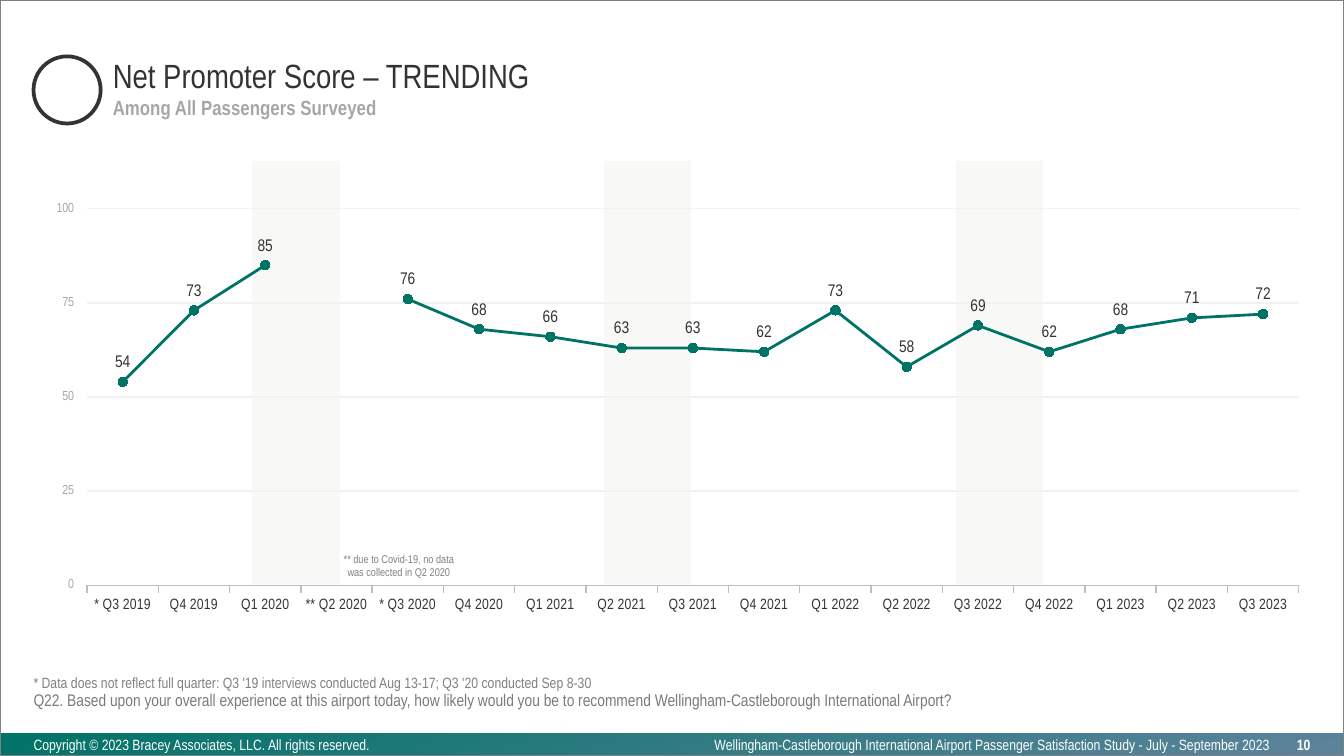
from pptx import Presentation
from pptx.chart.data import CategoryChartData
from pptx.dml.color import RGBColor
from pptx.enum.chart import (XL_CHART_TYPE, XL_LABEL_POSITION, XL_MARKER_STYLE,
                             XL_TICK_MARK)
from pptx.enum.shapes import MSO_SHAPE
from pptx.enum.text import MSO_ANCHOR, PP_ALIGN
from pptx.oxml import parse_xml
from pptx.oxml.ns import nsdecls, qn
from pptx.util import Inches, Pt

RECT, OVAL = MSO_SHAPE.RECTANGLE, MSO_SHAPE.OVAL
TOP, BOTTOM = MSO_ANCHOR.TOP, MSO_ANCHOR.BOTTOM
LEFT, MID, RIGHT = PP_ALIGN.LEFT, PP_ALIGN.CENTER, PP_ALIGN.RIGHT
LINES = XL_CHART_TYPE.LINE_MARKERS
ABOVE, ROUND = XL_LABEL_POSITION.ABOVE, XL_MARKER_STYLE.CIRCLE
OUT, NONE = XL_TICK_MARK.OUTSIDE, XL_TICK_MARK.NONE

FONT = "Arial Narrow"
COLORS = {"teal": "007367", "steel": "5D839B", "ink": "333333",
          "white": "FFFFFF", "gray": "808080", "ask": "7A7A7A",
          "pale": "A6A6A6", "axis": "BFBFBF", "grid": "F2F2F2",
          "band": "F8F8F6"}
CELL = 0.25  # grid columns and rows, in inches
WIDE, HIGH = 40.04, 22.52  # slide size in cells

# Boxes in cells: left, top, width, height
PAGE = (0, 0, WIDE, HIGH)
HEAD = (1, 1.64, 38, 2.04)
TREND = (1, 4.8, 37.96, 14.8)
NOTES = (1, 19.92, 38, 1.24)
FOOT = (0, 21.84, WIDE, 0.68)

AIRPORT = "Wellingham-Castleborough International Airport"
SCORES = [54, 73, 85, None, 76, 68, 66, 63, 63, 62, 73, 58, 69, 62, 68, 71, 72]
MARKS = {0: "* ", 3: "** ", 4: "* "}  # footnote signs by quarter


def rgb(name):
    return RGBColor.from_string(COLORS[name])


def place(box, x, y, w, h):
    """Turn cells inside a box into slide lengths."""
    return [Inches(v * CELL) for v in (box[0] + x, box[1] + y, w, h)]


def shape(slide, kind, spot, fill=None, line=None, width=1):
    item = slide.shapes.add_shape(kind, *spot)
    item.shadow.inherit = False
    if fill:
        item.fill.solid()
        item.fill.fore_color.rgb = rgb(fill)
    else:
        item.fill.background()
    if line:
        item.line.color.rgb = rgb(line)
        item.line.width = Pt(width)
    else:
        item.line.fill.background()
    return item


def style(font, size, color, bold=False):
    font.name, font.size, font.bold = FONT, Pt(size), bold
    font.color.rgb = rgb(color)


def text(slide, words, spot, size=8, color="gray", bold=False, align=LEFT,
         anchor=BOTTOM):
    frame = slide.shapes.add_textbox(*spot).text_frame
    frame.word_wrap = True
    frame.vertical_anchor = anchor
    frame.margin_left = frame.margin_right = 0
    frame.margin_top = frame.margin_bottom = 0
    para = frame.paragraphs[0]
    para.alignment = align
    run = para.add_run()
    run.text = words
    style(run.font, size, color, bold)


def frame(slide, box):
    shape(slide, RECT, place(box, 0, 0, *box[2:]), line="gray")


def head(slide, box):
    shape(slide, OVAL, place(box, 0, 0.04, 2, 2), "white", "ink", 2)
    left, wide = 2.36, box[2] - 2.36
    text(slide, "Net Promoter Score – TRENDING", place(box, left, 0, wide, 1.2),
         size=18, color="ink", anchor=TOP)
    text(slide, "Among All Passengers Surveyed",
         place(box, left, 1.2, wide, 0.76), size=11, color="pale", bold=True,
         anchor=TOP)


def clear(chart, plot):
    """Fix the plot area and leave its background open."""
    root = chart.element
    bare = f'<c:spPr {nsdecls("c", "a")}><a:noFill/><a:ln><a:noFill/></a:ln></c:spPr>'
    root.find(qn("c:chart")).addnext(parse_xml(bare))
    area = root.find(qn("c:chart")).find(qn("c:plotArea"))
    for old in area.findall(qn("c:layout")):
        area.remove(old)
    sizes = "".join(f'<c:{k} val="{v}"/>' for k, v in zip("xywh", plot))
    area.insert(0, parse_xml(
        f'<c:layout {nsdecls("c")}><c:manualLayout><c:layoutTarget val="inner"/>'
        '<c:xMode val="edge"/><c:yMode val="edge"/>'
        f'{sizes}</c:manualLayout></c:layout>'))
    area.append(parse_xml(bare))


def trend(slide, box):
    # Shaded bands behind the chart
    for i in range(3):
        shape(slide, RECT, place(box, 6.52 + 10.48 * i, 0, 2.6, 12.6), "band")

    # Quarters run on from Q3 2019
    data = CategoryChartData(number_format="0")
    data.categories = [f"{MARKS.get(i, '')}Q{(i + 2) % 4 + 1} {2019 + (i + 2) // 4}"
                       for i in range(len(SCORES))]
    data.add_series("Series 1", SCORES)
    chart = slide.shapes.add_chart(LINES, *place(box, 0, 0, *box[2:]), data).chart
    chart.has_legend = chart.has_title = False
    style(chart.font, 9, "ink")
    clear(chart, (0.042, 0.096, 0.951, 0.758))

    # Score line
    plot = chart.plots[0]
    plot.vary_by_categories = False
    line = plot.series[0]
    line.smooth = False
    line.format.line.color.rgb = rgb("teal")
    line.format.line.width = Pt(1.5)
    line.marker.style, line.marker.size = ROUND, 5
    line.marker.format.fill.solid()
    line.marker.format.fill.fore_color.rgb = rgb("teal")
    line.marker.format.line.color.rgb = rgb("teal")
    tags = line.data_labels
    tags.show_value, tags.position = True, ABOVE
    tags.number_format, tags.number_format_is_linked = "0", False
    style(tags.font, 9, "ink")

    # Axes
    for axis, size, color in ((chart.category_axis, 8, "ink"),
                              (chart.value_axis, 7, "pale")):
        axis.major_tick_mark, axis.minor_tick_mark = OUT, NONE
        style(axis.tick_labels.font, size, color)
    base, scale = chart.category_axis, chart.value_axis
    base.has_major_gridlines = False
    base.format.line.color.rgb = rgb("axis")
    base.format.line.width = Pt(0.75)
    scale.minimum_scale, scale.maximum_scale, scale.major_unit = 0, 100, 25
    scale.format.line.fill.background()
    scale.major_gridlines.format.line.color.rgb = rgb("grid")
    scale.major_gridlines.format.line.width = Pt(0.75)

    # Note in the gap
    text(slide, "** due to Covid-19, no data was collected in Q2 2020",
         place(box, 9.04, 11.56, 3.68, 0.88), size=6, align=MID)


def notes(slide, box):
    text(slide, "* Data does not reflect full quarter: Q3 '19 interviews "
         "conducted Aug 13-17; Q3 '20 conducted Sep 8-30",
         place(box, 0, 0.08, 27.2, 0.6))
    text(slide, "Q22. Based upon your overall experience at this airport today, "
         f"how likely would you be to recommend {AIRPORT}?",
         place(box, 0, 0, *box[2:]), size=9, color="ask")


def foot(slide, box):
    bar = shape(slide, RECT, place(box, 0, 0, *box[2:]), "teal")
    bar.fill.gradient()
    bar.fill.gradient_angle = 290
    for stop, spot, name in zip(bar.fill.gradient_stops, (0, 1), ("teal", "steel")):
        stop.position = spot
        stop.color.rgb = rgb(name)
    text(slide, "Copyright © 2023 Bracey Associates, LLC. All rights reserved.",
         place(box, 1, 0.16, 11.6, 0.44), color="white")
    text(slide, f"{AIRPORT} Passenger Satisfaction Study - July - September 2023",
         place(box, 21.04, 0.08, 17.08, 0.52), color="white", align=MID, anchor=TOP)
    text(slide, "10", place(box, 38.04, 0.16, 1, 0.44), color="white", bold=True,
         align=RIGHT)


def main():
    deck = Presentation()
    deck.slide_width, deck.slide_height = Inches(WIDE * CELL), Inches(HIGH * CELL)
    slide = deck.slides.add_slide(deck.slide_layouts[6])
    foot(slide, FOOT)
    frame(slide, PAGE)
    head(slide, HEAD)
    trend(slide, TREND)
    notes(slide, NOTES)
    deck.save("out.pptx")


if __name__ == "__main__":
    main()
